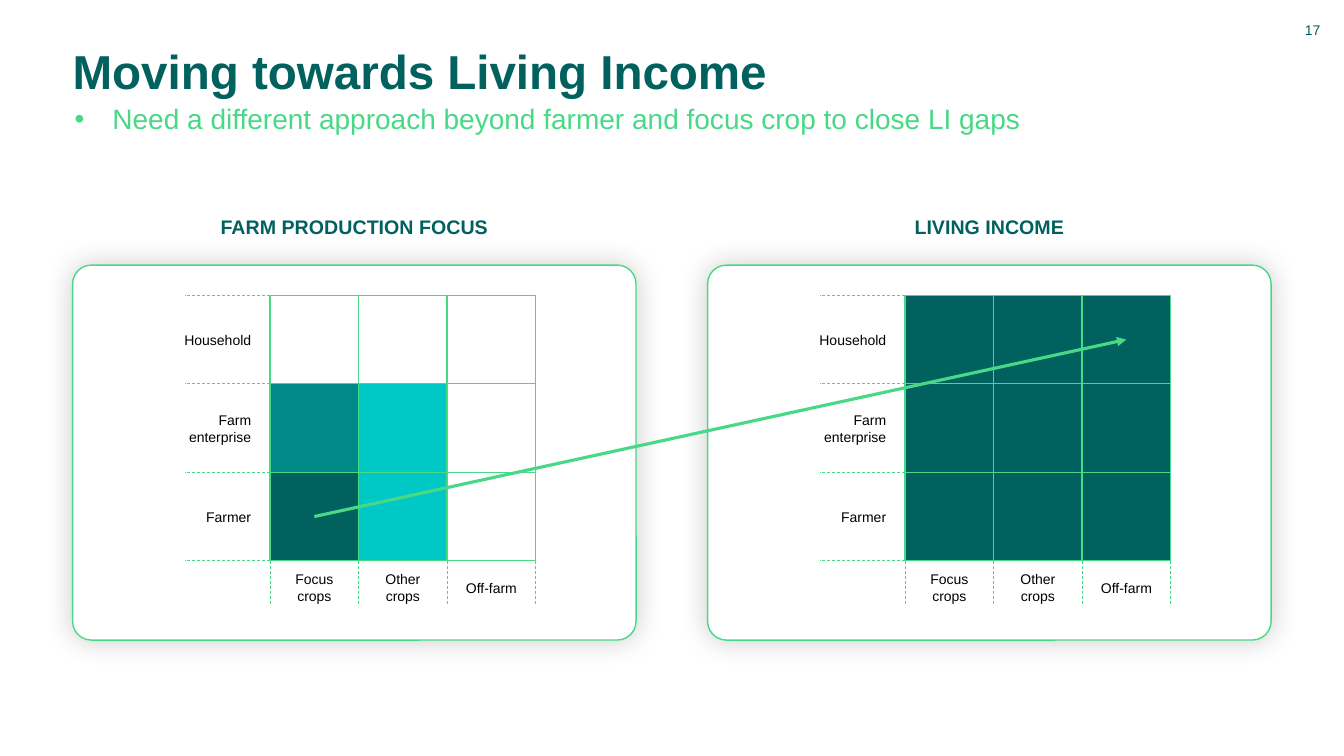
from dataclasses import dataclass

from lxml import etree
from pptx import Presentation
from pptx.dml.color import RGBColor
from pptx.enum import dml, shapes, text
from pptx.oxml import ns
from pptx.util import Pt

DARK_GREEN = RGBColor(0x00, 0x61, 0x5F)
TEAL = RGBColor(0x00, 0x8A, 0x87)
TURQUOISE = RGBColor(0x00, 0xC8, 0xC4)
LIGHT_GREEN = RGBColor(0x47, 0xD9, 0x85)
WHITE = RGBColor(0xFF, 0xFF, 0xFF)
BLACK = RGBColor(0, 0, 0)

FONT = "Arial"
LEFT, CENTER, RIGHT = text.PP_ALIGN.LEFT, text.PP_ALIGN.CENTER, text.PP_ALIGN.RIGHT
TOP, MIDDLE, BOTTOM = text.MSO_ANCHOR.TOP, text.MSO_ANCHOR.MIDDLE, text.MSO_ANCHOR.BOTTOM

ROWS = ("Household", "Farm enterprise", "Farmer")
COLUMNS = ("Focus crops", "Other crops", "Off-farm")
CARD_TOP, CARD_WIDTH, CARD_HEIGHT = 189.36, 402.48, 267.84
GRID_OFFSET, GRID_TOP, CELL = 141.12, 210.96, 63.2
GRID_BOTTOM = GRID_TOP + CELL * len(ROWS)
ROW_GUIDE, COLUMN_GUIDE = 61, 31


@dataclass(frozen=True)
class Panel:
    heading: str
    left: float
    fills: tuple[tuple[RGBColor, ...], ...]

    @property
    def grid_left(self) -> float:
        return self.left + GRID_OFFSET

    def cell_center(self, row: int, column: int) -> tuple[float, float]:
        return self.grid_left + CELL * (column + 0.5), GRID_TOP + CELL * (row + 0.5)


PANELS = (
    Panel("FARM PRODUCTION FOCUS", 51.84, (
        (WHITE, WHITE, WHITE),
        (TEAL, TURQUOISE, WHITE),
        (DARK_GREEN, TURQUOISE, WHITE),
    )),
    Panel("LIVING INCOME", 505.44, ((DARK_GREEN,) * 3,) * 3),
)


def place(shape, left: float, top: float, width: float, height: float) -> None:
    shape.left, shape.top, shape.width, shape.height = map(Pt, (left, top, width, height))


def write(shape, content: str, *, size: float, color: RGBColor, bold: bool = False,
          align=LEFT, anchor=MIDDLE, inset: float | None = None,
          line_spacing: float = 1.0, space_after: float = 0) -> None:
    frame = shape.text_frame
    frame.word_wrap = True
    frame.auto_size = text.MSO_AUTO_SIZE.NONE
    frame.vertical_anchor = anchor
    if inset is not None:
        frame.margin_left = frame.margin_right = Pt(inset)
        frame.margin_top = frame.margin_bottom = Pt(inset)
    frame.text = content
    paragraph = frame.paragraphs[0]
    paragraph.alignment = align
    paragraph.line_spacing = line_spacing
    paragraph.space_before, paragraph.space_after = Pt(0), Pt(space_after)
    font = paragraph.runs[0].font
    font.name, font.size, font.bold = FONT, Pt(size), bold
    font.color.rgb = color


def add_text(parent, content: str, left: float, top: float, width: float,
             height: float, **style) -> None:
    box = parent.add_textbox(Pt(left), Pt(top), Pt(width), Pt(height))
    write(box, content, **style)


def add_box(parent, preset, left: float, top: float, width: float, height: float,
            fill: RGBColor):
    box = parent.add_shape(preset, Pt(left), Pt(top), Pt(width), Pt(height))
    box.shadow.inherit = False
    box.fill.solid()
    box.fill.fore_color.rgb = fill
    box.line.color.rgb = LIGHT_GREEN
    box.line.width = Pt(1)
    return box


def add_line(parent, start: tuple[float, float], end: tuple[float, float], width: float,
             dashed: bool = False, arrow: bool = False) -> None:
    line = parent.add_connector(shapes.MSO_CONNECTOR.STRAIGHT,
                                *(Pt(value) for value in (*start, *end)))
    line.line.color.rgb = LIGHT_GREEN
    line.line.width = Pt(width)
    if dashed:
        line.line.dash_style = dml.MSO_LINE.DASH
    properties = line._element.spPr
    if arrow:
        etree.SubElement(properties.find(ns.qn("a:ln")), ns.qn("a:tailEnd"), type="triangle")
    etree.SubElement(properties, ns.qn("a:effectLst"))


def add_glow(shape) -> None:
    """Give the shape a soft, centred shadow."""
    effects = shape._element.spPr.find(ns.qn("a:effectLst"))
    shadow = etree.SubElement(effects, ns.qn("a:outerShdw"), blurRad=str(Pt(20)),
                              dist="0", dir="0", algn="ctr", rotWithShape="0")
    color = etree.SubElement(shadow, ns.qn("a:srgbClr"), val=str(BLACK))
    etree.SubElement(color, ns.qn("a:alpha"), val="20000")


def draw_matrix(parent, panel: Panel) -> None:
    left = panel.grid_left
    for row, fills in enumerate(panel.fills):
        for column, fill in enumerate(fills):
            add_box(parent, shapes.MSO_SHAPE.RECTANGLE, left + CELL * column,
                    GRID_TOP + CELL * row, CELL, CELL, fill)
    for index in range(len(ROWS) + 1):
        y = GRID_TOP + CELL * index
        add_line(parent, (left, y), (left - ROW_GUIDE, y), 0.5, dashed=True)
    for index in range(len(COLUMNS) + 1):
        x = left + CELL * index
        add_line(parent, (x, GRID_BOTTOM), (x, GRID_BOTTOM + COLUMN_GUIDE), 0.5, dashed=True)
    for row, label in enumerate(ROWS):
        y = panel.cell_center(row, 0)[1]
        add_text(parent, label, left - 72.5, y - 16, 66, 32,
                 size=10, color=BLACK, align=RIGHT)
    for column, label in enumerate(COLUMNS):
        x = panel.cell_center(0, column)[0]
        add_text(parent, label, x - 27, GRID_BOTTOM + 3, 54, 32,
                 size=10, color=BLACK, align=CENTER)


def draw_panel(slide, panel: Panel) -> None:
    add_text(slide.shapes, panel.heading, panel.left, 144, CARD_WIDTH, 35.28,
             size=14, color=DARK_GREEN, bold=True, align=CENTER, space_after=6)
    card = add_box(slide.shapes, shapes.MSO_SHAPE.ROUNDED_RECTANGLE, panel.left, CARD_TOP,
                   CARD_WIDTH, CARD_HEIGHT, WHITE)
    card.adjustments[0] = 0.05
    add_glow(card)
    draw_matrix(slide.shapes.add_group_shape().shapes, panel)


def draw_titles(slide) -> None:
    title, subtitle = slide.shapes.title, slide.placeholders[1]
    place(title, 51.84, 36.72, 800, 33.84)
    write(title, "Moving towards Living Income", size=34, color=DARK_GREEN, bold=True,
          anchor=BOTTOM, inset=0, line_spacing=0.8)
    place(subtitle, 53.28, 72.72, 800, 32.4)
    properties = subtitle.text_frame.paragraphs[0]._p.get_or_add_pPr()
    properties.set("marL", "0")
    properties.set("indent", "0")
    etree.SubElement(properties, ns.qn("a:buNone"))
    write(subtitle, "Need a different approach beyond farmer and focus crop to close LI gaps",
          size=20, color=LIGHT_GREEN, anchor=TOP, inset=0, space_after=6)


def main() -> None:
    presentation = Presentation()
    presentation.slide_width, presentation.slide_height = Pt(960), Pt(540)
    slide = presentation.slides.add_slide(presentation.slide_layouts[1])
    draw_titles(slide)
    add_text(slide.shapes, "17", 923.76, 15.12, 19.44, 12.96,
             size=10, color=DARK_GREEN, align=RIGHT, inset=0)
    for panel in PANELS:
        draw_panel(slide, panel)
    production, income = PANELS
    add_line(slide.shapes, production.cell_center(2, 0), income.cell_center(0, 2),
             2.25, arrow=True)
    presentation.save("out.pptx")


if __name__ == "__main__":
    main()
